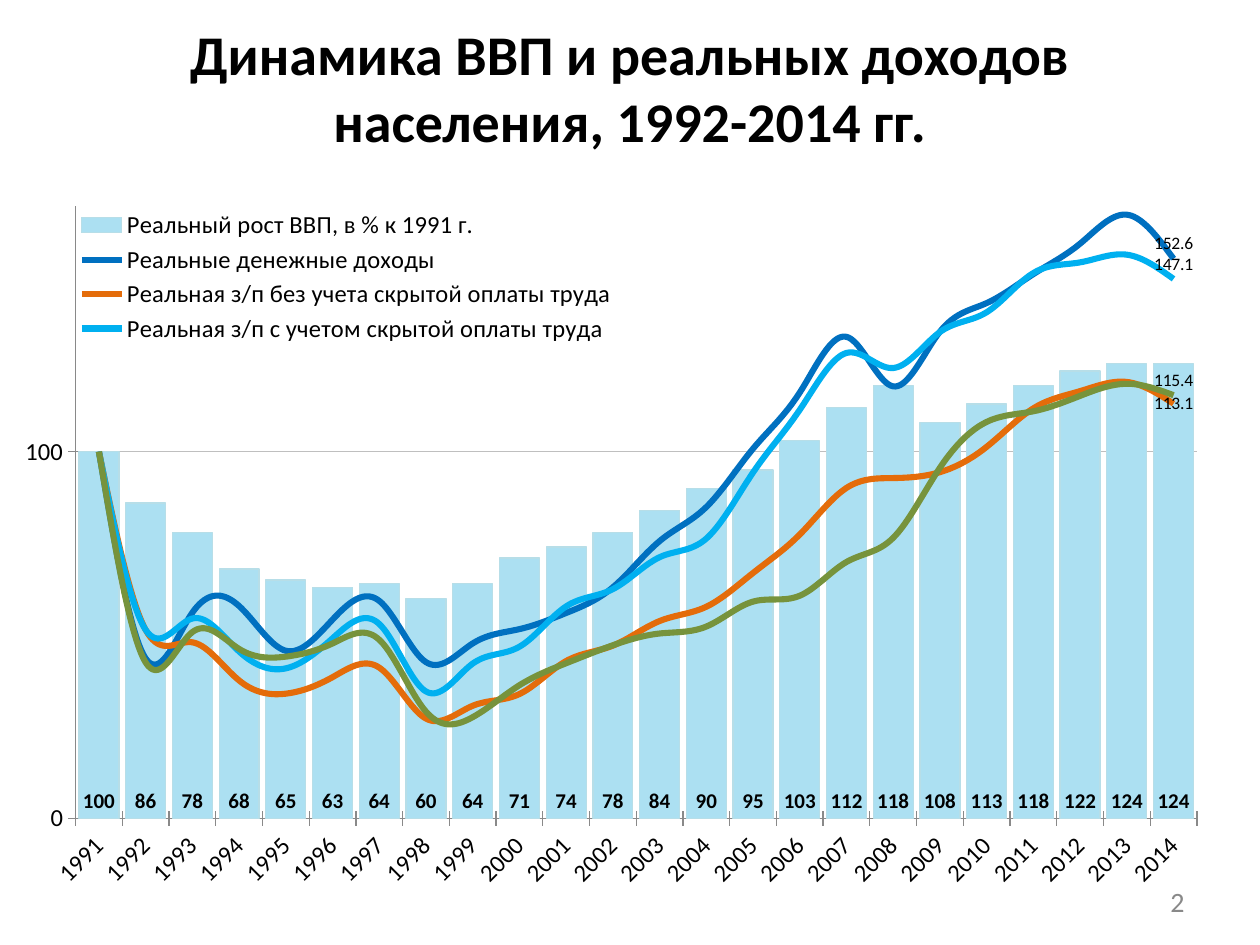
from pptx import Presentation
from pptx import util as u
from pptx.chart import data as cd
from pptx.dml.color import RGBColor
from pptx.enum import chart as ec, text as et
from pptx.oxml import parse_xml
from pptx.oxml.ns import nsdecls, qn

BLACK = RGBColor(0, 0, 0)
GRAY = RGBColor(0x89, 0x89, 0x89)
GRID = RGBColor(0xBF, 0xBF, 0xBF)
PALE = RGBColor(0xAC, 0xE0, 0xF2)
EDGE = RGBColor(0xB7, 0xDE, 0xE8)
BLUE = RGBColor(0x00, 0x70, 0xC0)
ORANGE = RGBColor(0xE4, 0x6C, 0x0A)
SKY = RGBColor(0x00, 0xB0, 0xF0)
GREEN = RGBColor(0x77, 0x93, 0x3C)
FACE = "Calibri"

YEARS = [str(y) for y in range(1991, 2015)]
GDP = ("Реальный рост ВВП, в % к 1991 г.",
       [100, 86, 78, 68, 65, 63, 64, 60, 64, 71, 74, 78,
        84, 90, 95, 103, 112, 118, 108, 113, 118, 122, 124, 124])
ABOVE, CENTER = ec.XL_LABEL_POSITION.ABOVE, ec.XL_LABEL_POSITION.CENTER
LINES = [
    ("Реальные денежные доходы", BLUE, ABOVE,
     [100, 43.6, 56.1, 57.9, 45.7, 54.2, 59.3, 42.6, 47.7, 51.6, 56.0, 63.0,
      75.6, 84.9, 100.8, 116.1, 131.3, 117.8, 132.7, 140.5, 148.4, 156.7, 164.6, 152.6]),
    ("Реальная з/п без учета скрытой оплаты труда", ORANGE, CENTER,
     [100, 51.4, 48.0, 37.6, 34.0, 38.5, 41.1, 27.2, 30.7, 33.9, 42.9, 47.1,
      53.8, 57.7, 66.9, 77.4, 90.1, 92.8, 94.4, 101.3, 111.8, 116.5, 119.0, 113.1]),
    ("Реальная з/п с учетом скрытой оплаты труда", SKY, ABOVE,
     [100, 51.4, 54.5, 45.5, 40.9, 49.1, 53.0, 34.6, 42.2, 46.8, 57.8, 62.5,
      71.2, 76.3, 94.3, 111.4, 126.9, 122.8, 132.6, 138.0, 148.7, 151.6, 153.7, 147.1]),
    ("", GREEN, ABOVE,
     [100, 42.5, 50.8, 46.2, 44.1, 47.7, 48.7, 29.1, 27.6, 36.3, 42.3, 47.2,
      50.4, 52.3, 59.1, 60.7, 69.9, 76.5, 95.6, 108.1, 111.0, 115.2, 118.5, 115.4]),
]


def style(font, size, color=BLACK, bold=False):
    """Set the face, size, colour and weight of a font."""
    font.name, font.size, font.bold = FACE, u.Pt(size), bold
    font.color.rgb = color


def write(shape, words, align, **form):
    """Put one formatted, vertically centred paragraph into a shape."""
    frame = shape.text_frame
    frame.text = words
    frame.word_wrap = True
    frame.auto_size = et.MSO_AUTO_SIZE.NONE
    frame.vertical_anchor = et.MSO_ANCHOR.MIDDLE
    para = frame.paragraphs[0]
    para.alignment = align
    style(para.runs[0].font, **form)


def place(shape, box):
    """Move a shape to a box of left, top, width and height."""
    shape.left, shape.top, shape.width, shape.height = box


def layout(x, y, w, h, inner=False):
    """Return a manual chart layout in fractions of the chart."""
    goal = '<c:layoutTarget val="inner"/>' if inner else ""
    return parse_xml(
        f'<c:layout {nsdecls("c")}><c:manualLayout>{goal}'
        '<c:xMode val="edge"/><c:yMode val="edge"/>'
        f'<c:x val="{x}"/><c:y val="{y}"/><c:w val="{w}"/><c:h val="{h}"/>'
        '</c:manualLayout></c:layout>')


def split(chart):
    """Move every series but the first from the columns to a line plot."""
    cols = chart.plots[0]._element
    ids = "".join(f'<c:axId val="{a.get("val")}"/>' for a in cols.findall(qn("c:axId")))
    lines = parse_xml(
        f'<c:lineChart {nsdecls("c")}><c:grouping val="standard"/>'
        f'<c:varyColors val="0"/><c:marker val="1"/>{ids}</c:lineChart>')
    for ser in cols.findall(qn("c:ser"))[1:]:
        for flag in ser.findall(qn("c:invertIfNegative")):
            ser.remove(flag)
        lines.find(qn("c:marker")).addprevious(ser)
    cols.addnext(lines)


def bars(plot):
    """Format the columns and their labels at the base."""
    plot.gap_width, plot.vary_by_categories = 17, False
    ser = plot.series[0]
    ser.format.fill.solid()
    ser.format.fill.fore_color.rgb = PALE
    ser.format.line.color.rgb = EDGE
    ser.format.line.width = u.Pt(0.75)
    tags = ser.data_labels
    tags.show_value = True
    tags.number_format, tags.number_format_is_linked = "0", False
    tags.position = ec.XL_LABEL_POSITION.INSIDE_BASE
    style(tags.font, 12, bold=True)


def curves(plot):
    """Format the smooth lines and label the last point of each."""
    for ser, (_, color, spot, vals) in zip(plot.series, LINES):
        ser.smooth = True
        ser.marker.style = ec.XL_MARKER_STYLE.NONE
        ser.format.line.color.rgb = color
        ser.format.line.width = u.Pt(3.5)
        ser.data_labels.show_value = False
        tag = ser.points[len(vals) - 1].data_label
        style(tag.font, 10)
        tag.position = spot


def axes(chart):
    """Set the scale, grid and labels of both axes."""
    val, cat = chart.value_axis, chart.category_axis
    val.minimum_scale, val.maximum_scale, val.major_unit = 0, 167, 100
    val.major_gridlines.format.line.color.rgb = GRID
    val.major_gridlines.format.line.width = u.Pt(0.75)
    val.tick_labels.number_format = "0"
    val.tick_labels.number_format_is_linked = False
    for axis in (val, cat):
        axis.major_tick_mark = ec.XL_TICK_MARK.CROSS
        axis.format.line.color.rgb = GRAY
        style(axis.tick_labels.font, 14)
    cat._element.find(qn("c:txPr")).find(qn("a:bodyPr")).set("rot", "-2700000")


def legend(chart):
    """Lay the legend over the top left of the plot, for named series only."""
    chart.has_legend = True
    key = chart.legend
    key.position = ec.XL_LEGEND_POSITION.RIGHT
    key.include_in_layout = False
    style(key.font, 14)
    for old in key._element.findall(qn("c:layout")):
        key._element.remove(old)
    pos = key._element.find(qn("c:legendPos"))
    pos.addnext(layout(0.05, 0.04, 0.45, 0.19))
    pos.addnext(parse_xml(
        f'<c:legendEntry {nsdecls("c")}><c:idx val="{len(LINES)}"/>'
        '<c:delete val="1"/></c:legendEntry>'))


def graph(slide, box):
    """Draw the combined chart of output and incomes in a box."""
    data = cd.CategoryChartData(number_format="0.0")
    data.categories = YEARS
    data.add_series(*GDP, number_format="0")
    for name, _, _, vals in LINES:
        data.add_series(name, vals)
    chart = slide.shapes.add_chart(ec.XL_CHART_TYPE.COLUMN_CLUSTERED, *box, data).chart
    chart.has_title = False
    style(chart.font, 10)
    split(chart)
    bars(chart.plots[0])
    curves(chart.plots[1])
    axes(chart)
    legend(chart)
    area = chart.plots[0]._element.getparent()
    for old in area.findall(qn("c:layout")):
        area.remove(old)
    area.insert(0, layout(0.06, 0.04, 0.89, 0.82, inner=True))


def head(slide, box):
    """Place and format the slide title."""
    place(slide.shapes.title, box)
    write(slide.shapes.title, "Динамика ВВП и реальных доходов населения, 1992-2014 гг.",
          et.PP_ALIGN.CENTER, size=32, bold=True)


def foot(slide, box):
    """Write the page number."""
    write(slide.shapes.add_textbox(*box), "2", et.PP_ALIGN.RIGHT, size=16, color=GRAY)


def main():
    """Build and save the slide."""
    deck = Presentation()
    deck.slide_width, deck.slide_height = u.Cm(25.4), u.Cm(19.05)
    slide = deck.slides.add_slide(deck.slide_layouts[5])
    head(slide, [u.Cm(n) for n in (1.27, 0.76, 22.86, 1.96)])
    foot(slide, [u.Cm(n) for n in (18.21, 17.65, 5.92, 1.02)])
    graph(slide, [u.Cm(n) for n in (0, 3.55, 25.4, 15.06)])
    deck.save("out.pptx")


if __name__ == "__main__":
    main()
